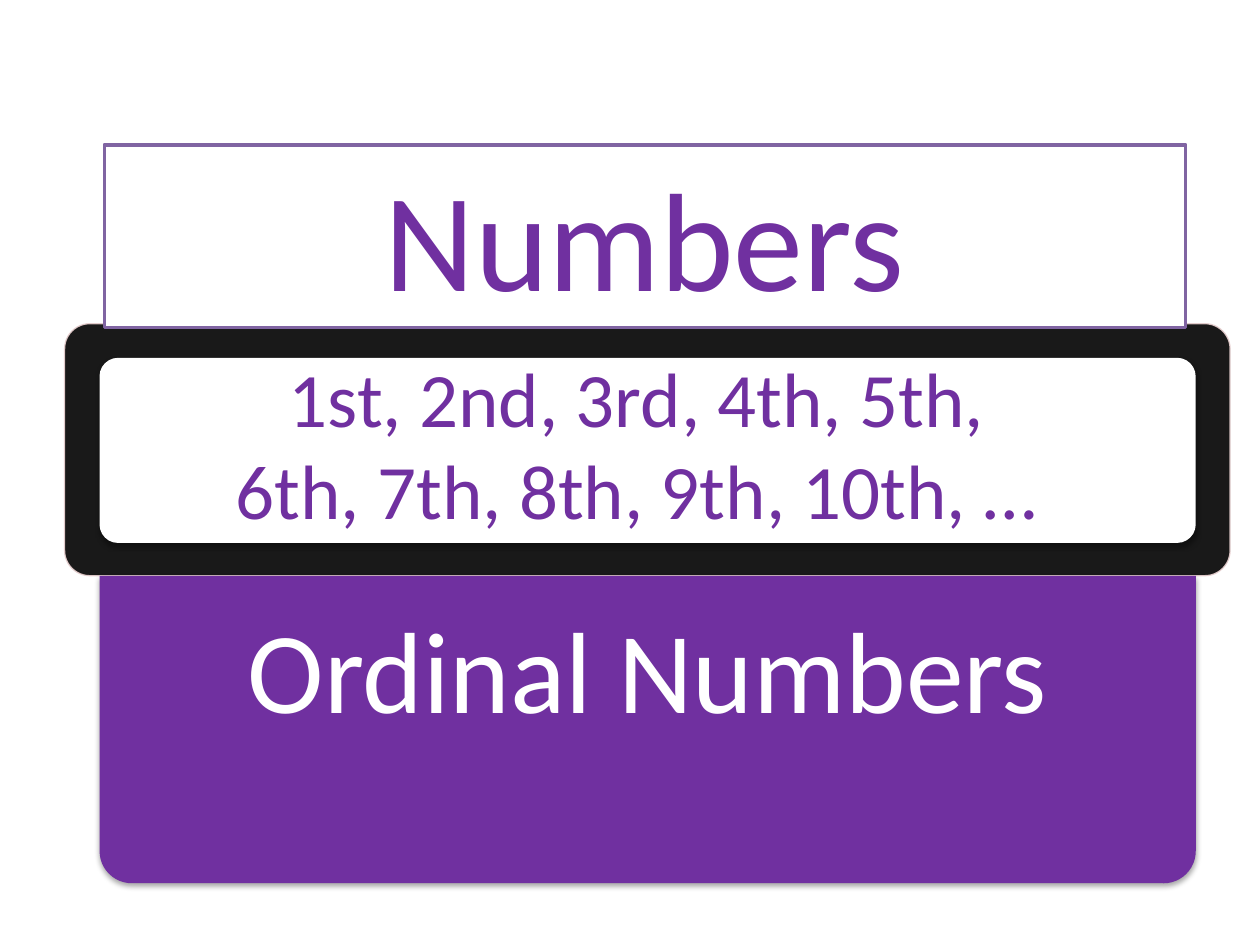
from lxml import etree
from pptx import Presentation
from pptx.dml.color import RGBColor
from pptx.enum.shapes import MSO_SHAPE
from pptx.enum.text import MSO_ANCHOR, PP_ALIGN
from pptx.oxml.ns import qn
from pptx.util import Pt

RECT = MSO_SHAPE.RECTANGLE
ROUND = MSO_SHAPE.ROUNDED_RECTANGLE
TAB = MSO_SHAPE.ROUND_2_SAME_RECTANGLE
TOP = MSO_ANCHOR.TOP
CENTER = PP_ALIGN.CENTER
FONT = "Calibri"
COLORS = {
    "white": "FFFFFF",
    "black": "000000",
    "purple": "7030A0",
    "edge": "8064A2",
    "rim": "E8D0D0",
}


def color(name):
    return RGBColor.from_string(COLORS[name])


def fade(fill, share):
    tint = fill._xPr.find(qn("a:solidFill"))[0]
    etree.SubElement(tint, qn("a:alpha"), val=str(share * 1000))


def shade(shape):
    effects = shape._element.spPr.find(qn("a:effectLst"))
    drop = etree.SubElement(
        effects, qn("a:outerShdw"), blurRad=str(Pt(3.1)),
        dist=str(Pt(1.8)), dir="5400000", rotWithShape="0")
    tint = etree.SubElement(drop, qn("a:srgbClr"), val=COLORS["black"])
    etree.SubElement(tint, qn("a:alpha"), val="35000")


def add_panel(slide, kind, box, fill, line=None, width=0, bends=()):
    shape = slide.shapes.add_shape(kind, *map(Pt, box))
    shape.shadow.inherit = False
    for spot, bend in enumerate(bends):
        shape.adjustments[spot] = bend
    shape.fill.solid()
    shape.fill.fore_color.rgb = color(fill)
    if line:
        shape.line.color.rgb = color(line)
        shape.line.width = Pt(width)
    else:
        shape.line.fill.background()
    return shape


def add_text(slide, box, text, size, tint, pads=(7.2, 3.6, 7.2, 3.6), space=None):
    frame = slide.shapes.add_textbox(*map(Pt, box)).text_frame
    frame.word_wrap = True
    frame.vertical_anchor = TOP
    (frame.margin_left, frame.margin_top,
     frame.margin_right, frame.margin_bottom) = map(Pt, pads)
    frame.text = text
    for part in frame.paragraphs:
        part.alignment = CENTER
        part.line_spacing = space
        font = part.runs[0].font
        font.name = FONT
        font.size = Pt(size)
        font.color.rgb = color(tint)


def add_band(slide, box):
    left, top, width, height = box
    band = add_panel(slide, ROUND, box, "black", "rim", 0.75, (0.1,))
    fade(band.fill, 90)
    fade(band.line.fill, 90)
    inset = (left + 20, top + 19.5, width - 39.6, height - 38.2)
    shade(add_panel(slide, ROUND, inset, "white", bends=(0.1,)))


def add_base(slide, box):
    base = add_panel(slide, TAB, box, "purple", bends=(0.105, 0))
    base.rotation = 180
    shade(base)
    add_text(slide, box, "Ordinal Numbers", size=66, tint="white",
             pads=(6, 21.6, 6, 36.7), space=0.9)


def add_title(slide, box):
    add_panel(slide, RECT, box, "white", "edge", 2)
    add_text(slide, box, "Numbers", size=80, tint="purple")


def add_list(slide, box):
    add_text(slide, box, "1st, 2nd, 3rd, 4th, 5th,\n6th, 7th, 8th, 9th, 10th, …",
             size=44, tint="purple")


def main():
    deck = Presentation()
    deck.slide_width = Pt(720)
    deck.slide_height = Pt(540)
    slide = deck.slides.add_slide(deck.slide_layouts[6])
    add_band(slide, (36.9, 185, 666, 144))
    add_base(slide, (56.9, 329, 626.4, 175.7))
    add_title(slide, (59.6, 82.8, 618, 104.4))
    add_list(slide, (69.1, 196.6, 589.7, 167))
    deck.save("out.pptx")


if __name__ == "__main__":
    main()
